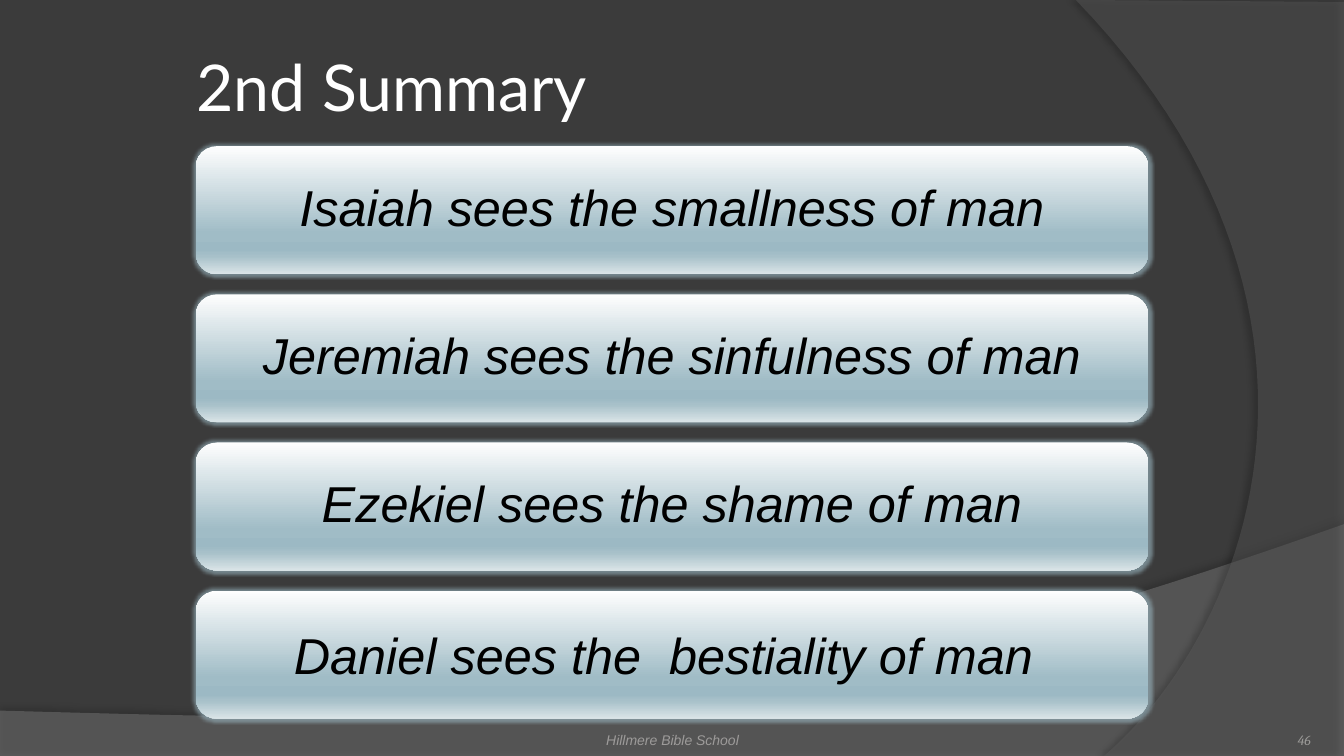
from dataclasses import dataclass

from lxml import etree
from pptx import Presentation
from pptx.dml.color import RGBColor
from pptx.enum.shapes import MSO_SHAPE
from pptx.enum.text import MSO_ANCHOR, MSO_AUTO_SIZE, PP_ALIGN
from pptx.oxml.ns import qn
from pptx.util import Inches, Pt

ROUNDED = MSO_SHAPE.ROUNDED_RECTANGLE
MIDDLE, BOTTOM = MSO_ANCHOR.MIDDLE, MSO_ANCHOR.BOTTOM
LEFT, CENTER, RIGHT = PP_ALIGN.LEFT, PP_ALIGN.CENTER, PP_ALIGN.RIGHT
NO_AUTOFIT = MSO_AUTO_SIZE.NONE

CARD_LEFT, CARD_TOP, CARD_WIDTH, CARD_HEIGHT, CARD_PITCH = 1.94, 1.45, 9.45, 1.27, 1.47
CARD_STOPS = [(0, "FEFEFE"), (68, "A0BCC6"), (81, "9CB9C4"), (86, "A7C0C9"), (100, "DAE4E7")]
CURVE_STEPS = 48

Point = tuple[float, float]


@dataclass
class TextRun:
    text: str
    size: float
    font: str
    color: str
    italic: bool = True


@dataclass
class Swoosh:
    before: list[Point]
    curve: tuple[Point, Point, Point, Point]
    color: str
    opacity: int
    shadow_opacity: int
    shadow_distance: float
    shadow_angle: int


@dataclass
class FooterItem:
    run: TextRun
    left: float
    width: float
    align: PP_ALIGN
    inset_top: float


def card_run(text: str, size: float = 36) -> TextRun:
    return TextRun(text, size, "Arial", "000000")


SWOOSHES = [
    Swoosh([(0, 7.05), (0, 7.51), (13.33, 7.51)],
           ((13.33, 5.2), (7.45, 7.29), (5.21, 7.19), (0, 7.05)),
           "7F7F7F", 45, 35, 3.5, 270),
    Swoosh([(13.33, 0.02), (13.33, 7.5)],
           ((10.95, 7.5), (12.46, 6.19), (13.57, 3), (10.67, 0)),
           "5E5E5E", 40, 45, 4, 180),
]
CARDS = [
    [card_run("Isaiah sees the smallness of man")],
    [card_run("Jeremiah sees the sinfulness of man")],
    [card_run("Ezekiel sees the shame of man")],
    [card_run("Daniel sees the  bestiality of man"), card_run(" ", 43)],
]
FOOTER = [
    FooterItem(TextRun("46", 10, "Cambria", "9B9A98"), 11.89, 1.11, RIGHT, 0),
    FooterItem(TextRun("Hillmere Bible School", 10, "Arial", "9D9B9A"), 4.56, 4.22, CENTER, 0.05),
]


def rgb(color: str) -> RGBColor:
    return RGBColor.from_string(color)


def add_color(parent, color: str, opacity: int = 100) -> None:
    node = etree.SubElement(parent, qn("a:srgbClr"), val=color)
    if opacity < 100:
        etree.SubElement(node, qn("a:alpha"), val=str(opacity * 1000))


def add_effect(shape, tag: str, color: str, opacity: int, **attributes: str) -> None:
    shape.shadow.inherit = False
    effects = shape.element.spPr.find(qn("a:effectLst"))
    add_color(etree.SubElement(effects, qn(tag), **attributes), color, opacity)


def write(frame, runs: list[TextRun], align: PP_ALIGN, anchor: MSO_ANCHOR,
          insets: tuple[float, float, float, float]) -> None:
    frame.word_wrap = True
    frame.auto_size = NO_AUTOFIT
    frame.vertical_anchor = anchor
    (frame.margin_left, frame.margin_top,
     frame.margin_right, frame.margin_bottom) = map(Inches, insets)
    paragraph = frame.paragraphs[0]
    paragraph.alignment = align
    for item in runs:
        run = paragraph.add_run()
        run.text = item.text
        run.font.size = Pt(item.size)
        run.font.name = item.font
        run.font.italic = item.italic
        run.font.color.rgb = rgb(item.color)


def curve_points(curve: tuple[Point, Point, Point, Point]) -> list[Point]:
    points = []
    for step in range(CURVE_STEPS + 1):
        t = step / CURVE_STEPS
        weights = ((1 - t) ** 3, 3 * t * (1 - t) ** 2, 3 * t ** 2 * (1 - t), t ** 3)
        points.append((sum(w * p[0] for w, p in zip(weights, curve)),
                       sum(w * p[1] for w, p in zip(weights, curve))))
    return points


def draw_swoosh(slide, swoosh: Swoosh):
    outline = [(Inches(x), Inches(y)) for x, y in swoosh.before + curve_points(swoosh.curve)]
    builder = slide.shapes.build_freeform(*outline[0])
    builder.add_line_segments(outline[1:], close=True)
    shape = builder.convert_to_shape()
    shape.fill.solid()
    shape.fill.fore_color.rgb = rgb(swoosh.color)
    fill_color = shape.element.spPr.find(qn("a:solidFill"))[0]
    etree.SubElement(fill_color, qn("a:alpha"), val=str(swoosh.opacity * 1000))
    shape.line.fill.background()
    add_effect(shape, "a:outerShdw", "000000", swoosh.shadow_opacity,
               blurRad=str(Pt(4)), dist=str(Pt(swoosh.shadow_distance)),
               dir=str(swoosh.shadow_angle * 60000))
    return shape


def draw_card(slide, row: int, runs: list[TextRun]) -> None:
    card = slide.shapes.add_shape(ROUNDED, Inches(CARD_LEFT), Inches(CARD_TOP + row * CARD_PITCH),
                                  Inches(CARD_WIDTH), Inches(CARD_HEIGHT))
    card.fill.gradient()
    card.fill.gradient_angle = 270
    stops = card.element.spPr.find(qn("a:gradFill")).find(qn("a:gsLst"))
    for stop in list(stops):
        stops.remove(stop)
    for position, color in CARD_STOPS:
        add_color(etree.SubElement(stops, qn("a:gs"), pos=str(position * 1000)), color)
    card.line.fill.background()
    add_effect(card, "a:glow", "9CB9C4", 60, rad=str(Pt(4)))
    write(card.text_frame, runs, CENTER, MIDDLE, (0.15, 0.15, 0.15, 0.15))
    card.text_frame.paragraphs[0].line_spacing = 0.9


def draw_footer(slide, item: FooterItem) -> None:
    box = slide.shapes.add_textbox(Inches(item.left), Inches(7.02), Inches(item.width), Inches(0.4))
    write(box.text_frame, [item.run], item.align, BOTTOM, (0, item.inset_top, 0, 0))


def main() -> None:
    deck = Presentation()
    deck.slide_width, deck.slide_height = Inches(13.33), Inches(7.5)
    slide = deck.slides.add_slide(deck.slide_layouts[5])
    slide.background.fill.solid()
    slide.background.fill.fore_color.rgb = rgb("3B3B3B")

    title = slide.shapes.title
    title.left, title.top = Inches(1.9), Inches(0.23)
    title.width, title.height = Inches(9.45), Inches(1.25)
    write(title.text_frame, [TextRun("2nd Summary", 46, "Lato", "FFFFFF", False)],
          LEFT, MIDDLE, (0.05, 0.05, 0.05, 0.05))

    for swoosh in SWOOSHES:
        shape = draw_swoosh(slide, swoosh)
        title.element.addprevious(shape.element)
    for row, runs in enumerate(CARDS):
        draw_card(slide, row, runs)
    for item in FOOTER:
        draw_footer(slide, item)

    deck.save("out.pptx")


if __name__ == "__main__":
    main()
